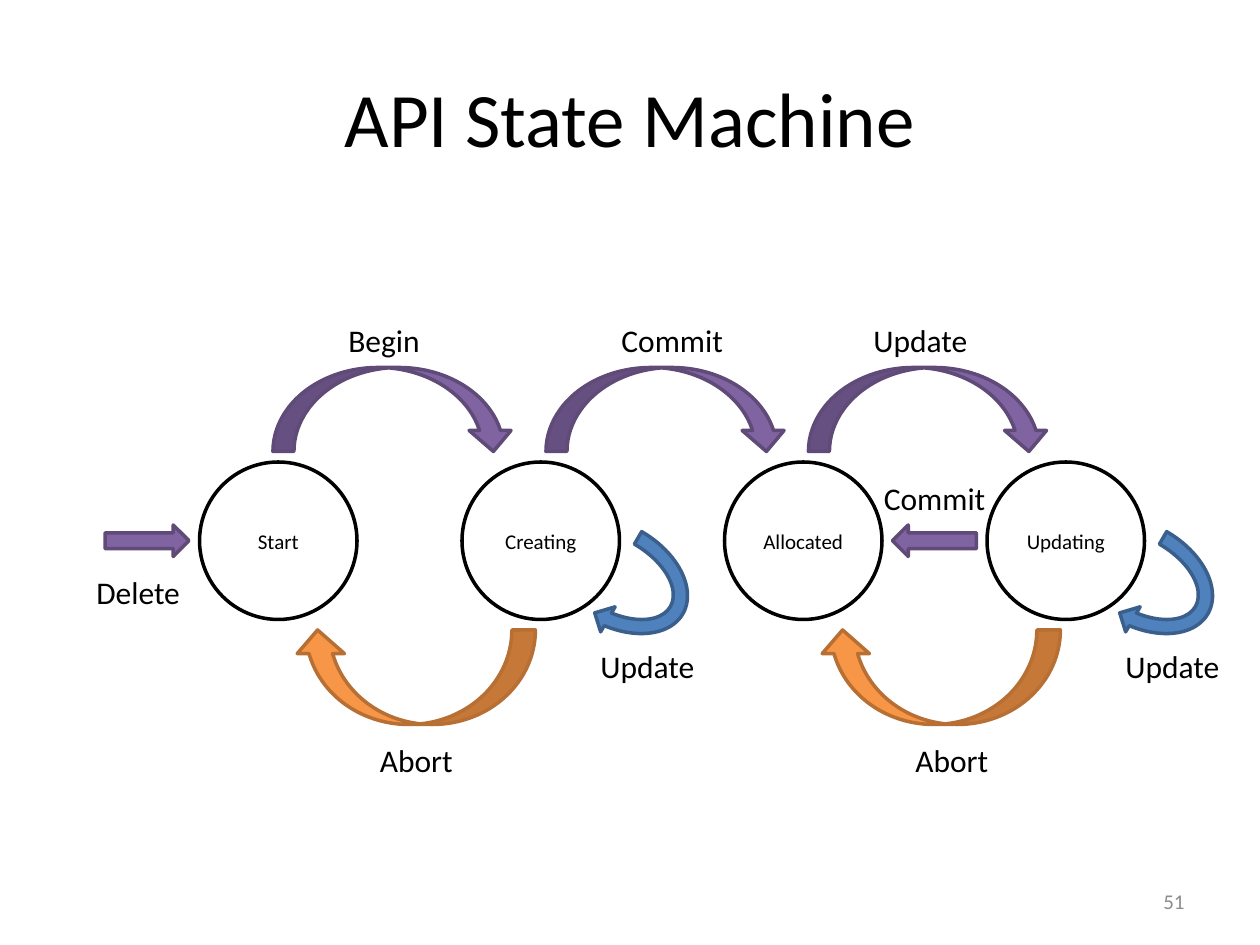
from dataclasses import dataclass

from pptx import Presentation
from pptx.dml.color import RGBColor
from pptx.enum.shapes import MSO_SHAPE
from pptx.enum.text import MSO_ANCHOR, MSO_AUTO_SIZE, PP_ALIGN
from pptx.util import Inches, Pt

CIRCLE = MSO_SHAPE.OVAL
ARC = MSO_SHAPE.CURVED_DOWN_ARROW
STRAIGHT = MSO_SHAPE.RIGHT_ARROW
LOOP = MSO_SHAPE.CIRCULAR_ARROW
LEFT, CENTER, RIGHT = PP_ALIGN.LEFT, PP_ALIGN.CENTER, PP_ALIGN.RIGHT
MIDDLE, TOP = MSO_ANCHOR.MIDDLE, MSO_ANCHOR.TOP
FIT_TEXT = MSO_AUTO_SIZE.SHAPE_TO_FIT_TEXT
TITLE_ONLY = 5


@dataclass(frozen=True)
class Theme:
    font: str = "Calibri"
    title_size: int = 44
    label_size: int = 18
    small_size: int = 12
    line_width: int = 2
    ink: str = "000000"
    paper: str = "FFFFFF"
    muted: str = "8C8C8C"
    # Each pair is fill and outline
    forward: tuple = ("8064A2", "5F4A78")
    back: tuple = ("F79646", "B76F34")
    repeat: tuple = ("4F81BD", "3A5F8C")


class Diagram:
    """Places elements on a grid of twelve cells to the inch."""

    def __init__(self, deck, theme):
        self.theme = theme
        self.page = deck.slides.add_slide(deck.slide_layouts[TITLE_ONLY])

    def place(self, *cells):
        return [Inches(cell / 12) for cell in cells]

    def set_text(self, shape, text, size, color, align, anchor):
        frame = shape.text_frame
        frame.text = text
        frame.vertical_anchor = anchor
        para = frame.paragraphs[0]
        para.alignment = align
        font = para.runs[0].font
        font.name, font.size = self.theme.font, Pt(size)
        font.color.rgb = RGBColor.from_string(color)

    def title(self, text, column, row, width, height):
        box = self.page.shapes.title
        box.left, box.top, box.width, box.height = self.place(column, row, width, height)
        self.set_text(box, text, self.theme.title_size, self.theme.ink, CENTER, MIDDLE)

    def shape(self, kind, colors, *cells):
        shape = self.page.shapes.add_shape(kind, *self.place(*cells))
        fill, line = colors
        shape.shadow.inherit = False
        shape.fill.solid()
        shape.fill.fore_color.rgb = RGBColor.from_string(fill)
        shape.line.color.rgb = RGBColor.from_string(line)
        shape.line.width = Pt(self.theme.line_width)
        return shape

    def state(self, name, column, row, size):
        colors = (self.theme.paper, self.theme.ink)
        circle = self.shape(CIRCLE, colors, column, row, size, size)
        self.set_text(circle, name, self.theme.small_size, self.theme.ink, CENTER, MIDDLE)

    def arrow(self, kind, colors, *cells, flips=(), rotation=0):
        arrow = self.shape(kind, colors, *cells)
        arrow.rotation = rotation
        for flip in flips:
            arrow._element.spPr.xfrm.set(flip, "1")

    def label(self, text, column, row, width):
        box = self.page.shapes.add_textbox(*self.place(column, row, width, 4.85))
        box.text_frame.word_wrap = False
        box.text_frame.auto_size = FIT_TEXT
        self.set_text(box, text, self.theme.label_size, self.theme.ink, LEFT, TOP)

    def page_number(self, text, *cells):
        box = self.page.shapes.add_textbox(*self.place(*cells))
        box.text_frame.word_wrap = True
        self.set_text(box, text, self.theme.small_size, self.theme.muted, RIGHT, MIDDLE)


def main():
    deck = Presentation()
    deck.slide_width, deck.slide_height = Inches(10), Inches(7.5)
    theme = Theme()
    diagram = Diagram(deck, theme)

    diagram.title("API State Machine", 6, 3.6, 108, 15)
    diagram.page_number("51", 86, 83.4, 28, 4.8)

    # States, evenly spaced
    for index, name in enumerate(("Start", "Creating", "Allocated", "Updating")):
        diagram.state(name, 19 + 25 * index, 44, 15)

    # Forward steps above, aborts below
    for column in (26, 52, 77):
        diagram.arrow(ARC, theme.forward, column, 35, 23, 8)
    for column in (78, 28):
        diagram.arrow(ARC, theme.back, column, 60, 23, 9, flips=("flipH", "flipV"))

    # Straight steps at mid height
    diagram.arrow(STRAIGHT, theme.forward, 85, 50, 8, 3, flips=("flipH",))
    diagram.arrow(STRAIGHT, theme.forward, 10, 50, 8, 3)

    # Loops that return to the same state
    for column in (53.2, 103.2):
        diagram.arrow(LOOP, theme.repeat, column, 46.8, 11, 16, rotation=120)

    # Transition names
    for text, width, spots in (
        ("Begin", 9.6, [(32, 30)]),
        ("Commit", 12.6, [(58, 30), (83, 45)]),
        ("Update", 11.8, [(82, 30), (56, 61), (106, 61)]),
        ("Abort", 9.6, [(35, 70), (86, 70)]),
        ("Delete", 10.8, [(8, 54)]),
    ):
        for column, row in spots:
            diagram.label(text, column, row, width)

    deck.save("out.pptx")


if __name__ == "__main__":
    main()
